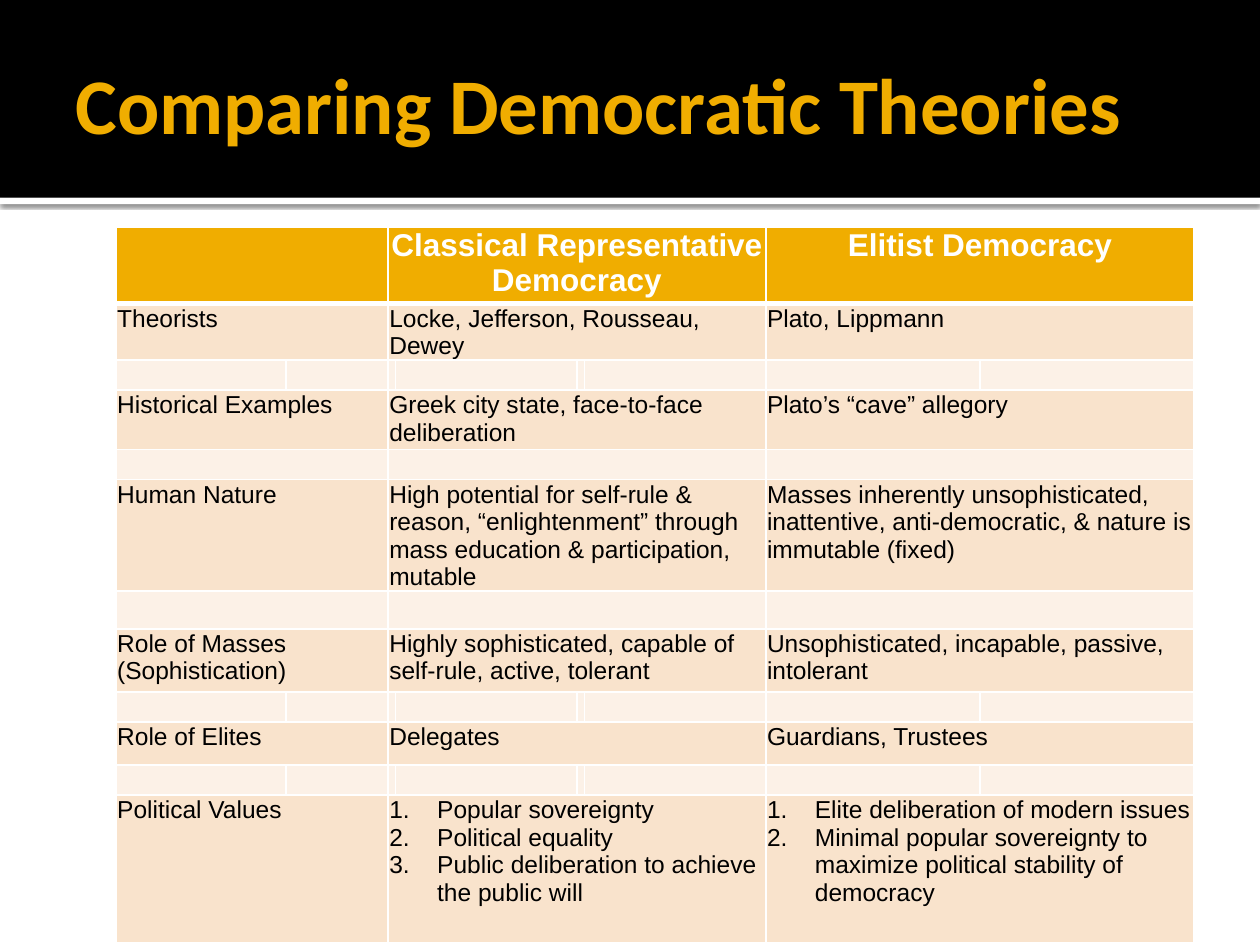
from dataclasses import dataclass

from lxml.etree import SubElement
from pptx import Presentation
from pptx.dml.color import RGBColor
from pptx.enum.shapes import MSO_SHAPE
from pptx.enum.text import MSO_ANCHOR, MSO_AUTO_SIZE, PP_ALIGN
from pptx.oxml import parse_xml
from pptx.oxml.ns import nsdecls, qn
from pptx.util import Inches, Pt


@dataclass(frozen=True)
class Theme:
    gold: str = "F0AD00"
    black: str = "000000"
    white: str = "FFFFFF"
    band: str = "F9E3CC"
    spacer: str = "FCF1E7"
    title_font: str = "Calibri"
    body_font: str = "Arial"
    title_size: int = 45
    header_size: int = 18
    body_size: int = 14
    spacer_size: int = 8


@dataclass(frozen=True)
class Row:
    height: float
    texts: tuple = ("", "", "")
    split: bool = False
    header: bool = False
    numbered: bool = False


THEME = Theme()
COL_WIDTHS = (1.35, 0.81, 0.05, 1.44, 0.05, 1.44, 1.7, 1.7)
GROUPS = ((0, 1), (2, 5), (6, 7))
ROWS = (
    Row(0.61, ("", "Classical Representative Democracy", "Elitist Democracy"), header=True),
    Row(0.44, ("Theorists", "Locke, Jefferson, Rousseau, Dewey", "Plato, Lippmann")),
    Row(0.24, split=True),
    Row(0.47, ("Historical Examples", "Greek city state, face-to-face deliberation",
               "Plato’s “cave” allegory")),
    Row(0.24),
    Row(0.7, ("Human Nature",
              "High potential for self-rule & reason, “enlightenment” through "
              "mass education & participation, mutable",
              "Masses inherently unsophisticated, inattentive, anti-democratic, "
              "& nature is immutable (fixed)")),
    Row(0.3),
    Row(0.5, ("Role of Masses\n(Sophistication)",
              "Highly sophisticated, capable of self-rule, active, tolerant",
              "Unsophisticated, incapable, passive, intolerant")),
    Row(0.24, split=True),
    Row(0.34, ("Role of Elites", "Delegates", "Guardians, Trustees")),
    Row(0.24, split=True),
    Row(1.17, ("Political Values",
               "Popular sovereignty\nPolitical equality\n"
               "Public deliberation to achieve the public will",
               "Elite deliberation of modern issues\n"
               "Minimal popular sovereignty to maximize political stability of democracy"),
        numbered=True),
)


def rgb(color: str) -> RGBColor:
    return RGBColor.from_string(color)


def style_run(r, font: str, size: int, color: str, bold: bool) -> None:
    r.font.name = font
    r.font.size = Pt(size)
    r.font.color.rgb = rgb(color)
    r.font.bold = bold


def add_bar(s, top: float, height: float, color: str):
    sp = s.shapes.add_shape(MSO_SHAPE.RECTANGLE, 0, Inches(top), Inches(10), Inches(height))
    sp.shadow.inherit = False
    sp.fill.solid()
    sp.fill.fore_color.rgb = rgb(color)
    sp.line.fill.background()
    return sp


def add_shadow(sp) -> None:
    effects = sp.element.spPr.find(qn("a:effectLst"))
    effects.append(parse_xml(
        f'<a:outerShdw {nsdecls("a")} blurRad="{Pt(2.5)}" dist="{Pt(0.8)}" dir="5400000">'
        f'<a:srgbClr val="{THEME.black}"><a:alpha val="60000"/></a:srgbClr></a:outerShdw>'))


def add_title(s, text: str) -> None:
    sp = s.shapes.title
    sp.left, sp.top, sp.width, sp.height = map(Inches, (0.5, 0.3, 8.92, 1.03))
    tf = sp.text_frame
    tf.text = text
    tf.word_wrap = True
    tf.auto_size = MSO_AUTO_SIZE.NONE
    tf.vertical_anchor = MSO_ANCHOR.MIDDLE
    tf.margin_left = Inches(0.1)
    tf.margin_right = tf.margin_top = tf.margin_bottom = Inches(0.05)
    p = tf.paragraphs[0]
    p.alignment = PP_ALIGN.LEFT
    style_run(p.runs[0], THEME.title_font, THEME.title_size, THEME.gold, True)
    sp.element.getparent().append(sp.element)


def set_borders(cell, top: int, bottom: int) -> None:
    tc_pr = cell._tc.get_or_add_tcPr()
    for i, (side, width) in enumerate(zip("LRTB", (1, 1, top, bottom))):
        tc_pr.insert(i, parse_xml(
            f'<a:ln{side} {nsdecls("a")} w="{Pt(width)}"><a:solidFill>'
            f'<a:srgbClr val="{THEME.white}"/></a:solidFill></a:ln{side}>'))


def number_paragraph(p) -> None:
    p_pr = p._p.get_or_add_pPr()
    p_pr.set("marL", str(Inches(0.38)))
    p_pr.set("indent", str(-Inches(0.38)))
    SubElement(p_pr, qn("a:buFont"), typeface="+mj-lt")
    SubElement(p_pr, qn("a:buAutoNum"), type="arabicPeriod")


def fill_cell(cell, text: str, row: Row, numbered: bool) -> None:
    cell.text_frame.text = text
    size = THEME.header_size if row.header else THEME.body_size
    color = THEME.white if row.header else THEME.black
    for p in cell.text_frame.paragraphs:
        p.alignment = PP_ALIGN.CENTER if row.header else PP_ALIGN.LEFT
        for r in p.runs:
            style_run(r, THEME.body_font, size, color, row.header)
        if not text:
            SubElement(p._p, qn("a:endParaRPr"), sz=str(THEME.spacer_size * 100))
        if numbered:
            number_paragraph(p)


def format_cell(cell, row: Row, index: int) -> None:
    cell.margin_left = cell.margin_right = cell.margin_top = Inches(0.01)
    cell.margin_bottom = 0
    cell.fill.solid()
    body = THEME.band if any(row.texts) else THEME.spacer
    cell.fill.fore_color.rgb = rgb(THEME.gold if row.header else body)
    set_borders(cell, 3 if index == 1 else 1, 3 if row.header else 1)


def add_comparison(s) -> None:
    heights = [row.height for row in ROWS]
    table = s.shapes.add_table(
        len(ROWS), len(COL_WIDTHS), Inches(0.92), Inches(1.8),
        Inches(sum(COL_WIDTHS)), Inches(sum(heights))).table
    for col, width in zip(table.columns, COL_WIDTHS):
        col.width = Inches(width)
    for i, row in enumerate(ROWS):
        table.rows[i].height = Inches(row.height)
        for j in range(len(COL_WIDTHS)):
            format_cell(table.cell(i, j), row, i)
        if row.split:
            for j in range(len(COL_WIDTHS)):
                fill_cell(table.cell(i, j), "", row, False)
            continue
        for k, ((first, last), text) in enumerate(zip(GROUPS, row.texts)):
            table.cell(i, first).merge(table.cell(i, last))
            fill_cell(table.cell(i, first), text, row, row.numbered and k > 0)


def main() -> None:
    prs = Presentation()
    prs.slide_width, prs.slide_height = Inches(10), Inches(7.5)
    s = prs.slides.add_slide(prs.slide_layouts[5])
    add_shadow(add_bar(s, 1.57, 0.05, THEME.white))
    add_bar(s, 0, 1.57, THEME.black)
    add_title(s, "Comparing Democratic Theories")
    add_comparison(s)
    prs.save("out.pptx")


if __name__ == "__main__":
    main()
